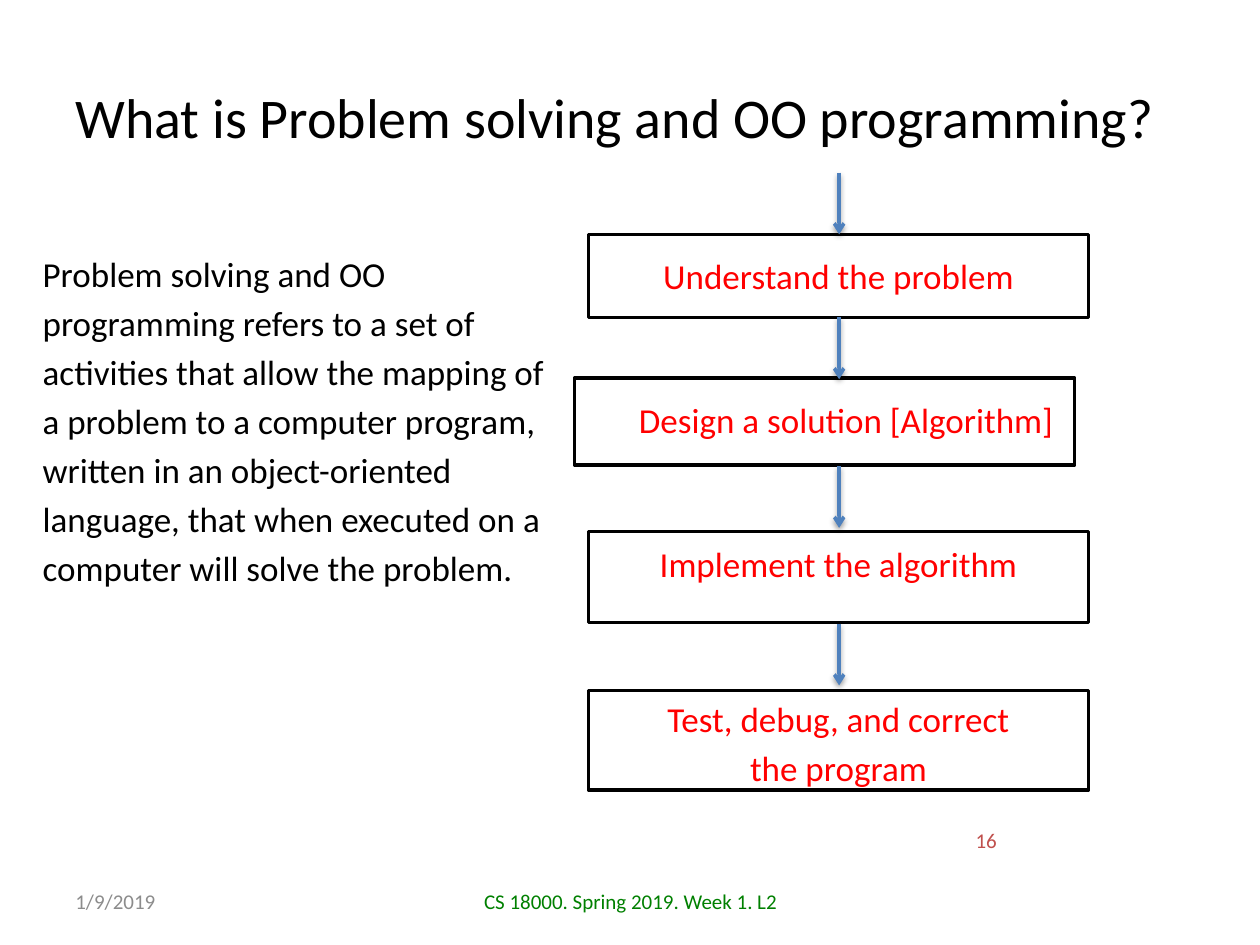
from dataclasses import dataclass
from typing import Optional

from lxml import etree
from pptx import Presentation
from pptx import util as u
from pptx.dml.color import RGBColor
from pptx.enum import shapes, text
from pptx.oxml import ns

HUES = {"ink": "000000", "paper": "FFFFFF", "step": "FF0000", "arrow": "4F81BD",
        "page": "C0504D", "course": "008000", "date": "8C8C8C"}
LEFT, MID, RIGHT = text.PP_ALIGN.LEFT, text.PP_ALIGN.CENTER, text.PP_ALIGN.RIGHT
TOP, HALF = text.MSO_ANCHOR.TOP, text.MSO_ANCHOR.MIDDLE
AXIS = 6.66
WIDTH = 3.97


@dataclass
class Label:
    words: str
    left: float
    top: float
    width: float
    height: float
    size: int = 20
    hue: str = "step"
    align: text.PP_ALIGN = MID
    anchor: text.MSO_ANCHOR = TOP
    pitch: Optional[int] = None


@dataclass
class Step:
    left: float
    top: float
    height: float
    start: float
    label: Label


LABELS = [
    Label("What is Problem solving and OO programming?", 0.5, 0.3, 9, 1.25, 32, "ink", LEFT, HALF),
    Label("Problem solving and OO programming refers to a set of activities that allow "
          "the mapping of a problem to a computer program, written in an object-oriented "
          "language, that when executed on a computer will solve the problem.",
          0.24, 1.9, 4.31, 2.84, 20, "ink", LEFT, pitch=28),
    Label("16", 5.68, 6.47, 2.33, 0.4, 12, "page", RIGHT, HALF),
    Label("CS 18000. Spring 2019. Week 1. L2", 3.42, 6.95, 3.17, 0.4, 12, "course", MID, HALF),
    Label("1/9/2019", 0.5, 6.95, 2.33, 0.4, 12, "date", LEFT, HALF),
]
STEPS = [
    Step(4.67, 1.86, 0.66, 1.37, Label("Understand the problem", 4.98, 1.97, 3.35, 0.44)),
    Step(4.56, 3, 0.69, 2.52,
         Label("Design a solution [Algorithm]", 4.67, 3.06, 4.09, 0.47, pitch=28)),
    Step(4.67, 4.22, 0.72, 3.7, Label("Implement the algorithm", 4.98, 4.26, 3.35, 0.44)),
    Step(4.67, 5.48, 0.79, 4.95,
         Label("Test, debug, and correct the program", 5.14, 5.43, 3.03, 0.88, pitch=28)),
]


def tint(name: str) -> RGBColor:
    return RGBColor.from_string(HUES[name])


def write(slide, item: Label) -> None:
    box = slide.shapes.add_textbox(
        *map(u.Inches, (item.left, item.top, item.width, item.height)))
    frame = box.text_frame
    frame.word_wrap = True
    frame.vertical_anchor = item.anchor
    para = frame.paragraphs[0]
    para.alignment = item.align
    if item.pitch:
        para.line_spacing = u.Pt(item.pitch)
    run = para.add_run()
    run.text = item.words
    run.font.name = "Calibri"
    run.font.size = u.Pt(item.size)
    run.font.color.rgb = tint(item.hue)


def arrow(slide, start: float, end: float) -> None:
    link = slide.shapes.add_connector(
        shapes.MSO_CONNECTOR.STRAIGHT, *map(u.Inches, (AXIS, start, AXIS, end)))
    link.line.color.rgb = tint("arrow")
    link.line.width = u.Pt(2)
    etree.SubElement(link.line._get_or_add_ln(), ns.qn("a:tailEnd"), type="arrow")
    group = etree.SubElement(link._element.spPr, ns.qn("a:effectLst"))
    shade = etree.SubElement(group, ns.qn("a:outerShdw"), blurRad="40000", dist="20000",
                             dir="5400000", rotWithShape="0")
    tone = etree.SubElement(shade, ns.qn("a:srgbClr"), val=HUES["ink"])
    etree.SubElement(tone, ns.qn("a:alpha"), val="38000")


def draw(slide, step: Step) -> None:
    box = slide.shapes.add_shape(
        shapes.MSO_SHAPE.RECTANGLE,
        *map(u.Inches, (step.left, step.top, WIDTH, step.height)))
    box.shadow.inherit = False
    box.fill.solid()
    box.fill.fore_color.rgb = tint("paper")
    box.line.color.rgb = tint("ink")
    box.line.width = u.Pt(2)
    write(slide, step.label)
    arrow(slide, step.start, step.start + 0.49)


def main() -> None:
    """Build the problem solving slide and save it."""
    deck = Presentation()
    deck.slide_width, deck.slide_height = u.Inches(10), u.Inches(7.5)
    slide = deck.slides.add_slide(deck.slide_layouts[6])
    for item in LABELS:
        write(slide, item)
    for step in STEPS:
        draw(slide, step)
    deck.save("out.pptx")


if __name__ == "__main__":
    main()
